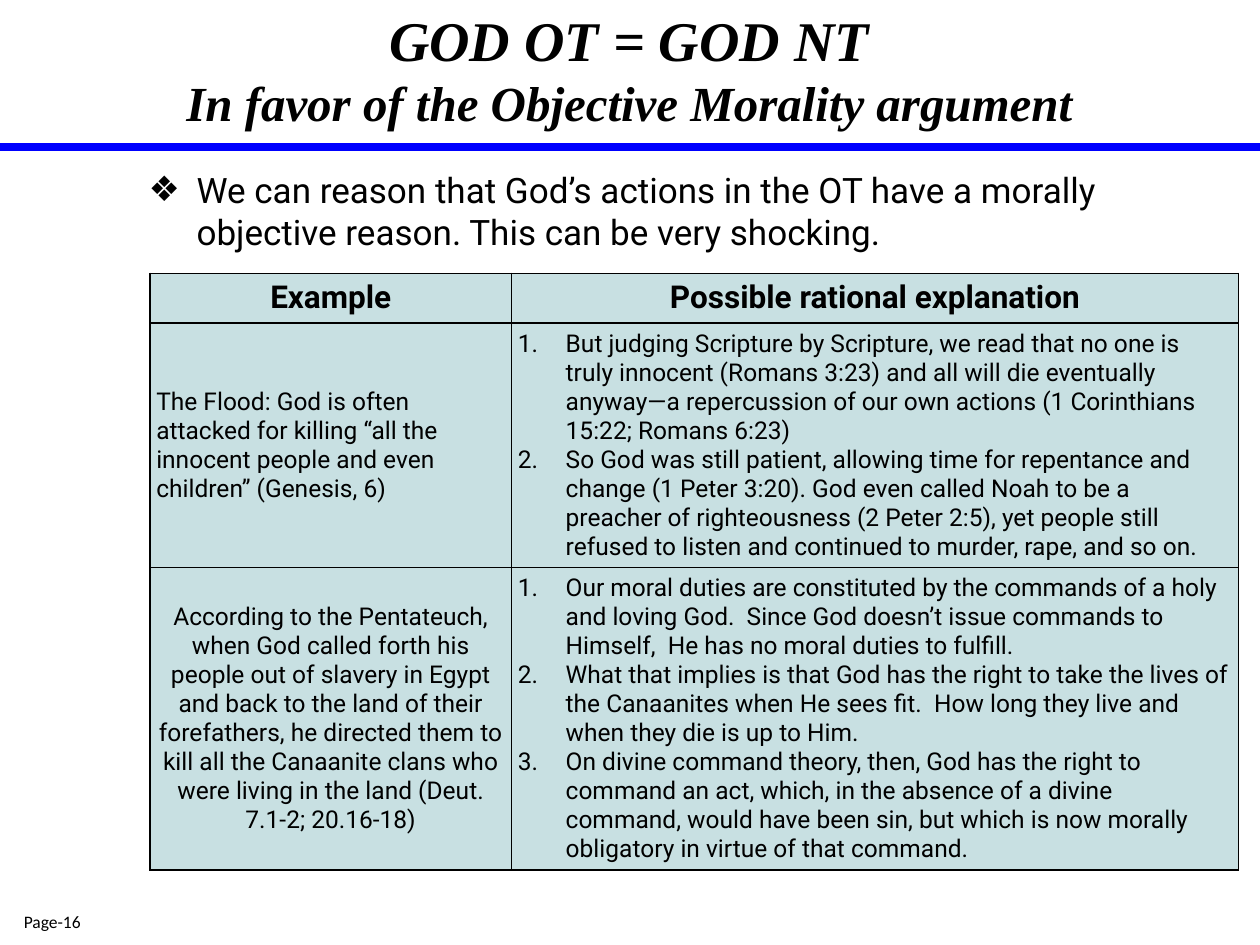
from dataclasses import dataclass

import lxml.etree
import pptx
import pptx.dml.color
import pptx.enum.shapes
import pptx.enum.text
import pptx.oxml.ns
import pptx.util

Inches = pptx.util.Inches
Pt = pptx.util.Pt
RGB = pptx.dml.color.RGBColor
Align = pptx.enum.text.PP_ALIGN
Anchor = pptx.enum.text.MSO_ANCHOR
qn = pptx.oxml.ns.qn


@dataclass(frozen=True)
class Theme:
    ink: RGB = RGB(0x00, 0x00, 0x00)
    rule: RGB = RGB(0x00, 0x00, 0xFF)
    cell: RGB = RGB(0xC8, 0xE0, 0xE2)
    title_font: str = "Times New Roman"
    body_font: str = "Roboto"
    page_font: str = "Calibri"
    title_size: int = 32
    subtitle_size: int = 28
    body_size: int = 20
    header_size: int = 18
    cell_size: int = 14
    page_size: int = 10
    rule_width: float = 4.5
    border_width: float = 1


THEME = Theme()
HANG = 0.38
CELL_INSET = 0.05
COLUMN_WIDTHS = (2.87, 5.77)
ROW_HEIGHTS = (0.39, 1.94, 2.4)

HEADERS = ("Example", "Possible rational explanation")
CASES = (
    (
        "The Flood: God is often attacked for killing “all the innocent people and even children” (Genesis, 6)",
        Align.LEFT,
        (
            "But judging Scripture by Scripture, we read that no one is truly innocent (Romans 3:23) and all will "
            "die eventually anyway—a repercussion of our own actions (1 Corinthians 15:22; Romans 6:23)",
            "So God was still patient, allowing time for repentance and change (1 Peter 3:20). God even called Noah "
            "to be a preacher of righteousness (2 Peter 2:5), yet people still refused to listen and continued to "
            "murder, rape, and so on.",
        ),
    ),
    (
        "According to the Pentateuch, when God called forth his people out of slavery in Egypt and back to the land "
        "of their forefathers, he directed them to kill all the Canaanite clans who were living in the land "
        "(Deut. 7.1-2; 20.16-18)",
        Align.CENTER,
        (
            "Our moral duties are constituted by the commands of a holy and loving God.  Since God doesn’t issue "
            "commands to Himself,  He has no moral duties to fulfill.",
            "What that implies is that God has the right to take the lives of the Canaanites when He sees fit.  How "
            "long they live and when they die is up to Him.",
            "On divine command theory, then, God has the right to command an act, which, in the absence of a divine "
            "command, would have been sin, but which is now morally obligatory in virtue of that command.",
        ),
    ),
)


def format_runs(paragraph, font, size, align=Align.LEFT, bold=False, italic=False):
    paragraph.alignment = align
    paragraph.space_before = Pt(0)
    for run in paragraph.runs:
        run.font.name = font
        run.font.size = Pt(size)
        run.font.bold = bold
        run.font.italic = italic
        run.font.color.rgb = THEME.ink


def add_marker(paragraph, tag, **attributes):
    properties = paragraph._p.get_or_add_pPr()
    properties.set("marL", str(Inches(HANG)))
    properties.set("indent", str(-Inches(HANG)))
    lxml.etree.SubElement(properties, qn(tag), attributes)


def place(shape, box):
    shape.left, shape.top, shape.width, shape.height = map(Inches, box)


def build_title(slide, box):
    title = slide.shapes.title
    place(title, box)
    frame = title.text_frame
    frame.auto_size = pptx.enum.text.MSO_AUTO_SIZE.NONE
    frame.vertical_anchor = Anchor.MIDDLE
    frame.text = "GOD OT = GOD NT\vIn favor of the Objective Morality argument"
    heading = frame.paragraphs[0]
    format_runs(heading, THEME.title_font, THEME.title_size, Align.CENTER, bold=True, italic=True)
    heading.runs[1].font.size = Pt(THEME.subtitle_size)


def build_rule(slide, left, right, y):
    rule = slide.shapes.add_connector(
        pptx.enum.shapes.MSO_CONNECTOR.STRAIGHT, Inches(left), Inches(y), Inches(right), Inches(y)
    )
    rule.line.color.rgb = THEME.rule
    rule.line.width = Pt(THEME.rule_width)
    lxml.etree.SubElement(rule._element.spPr, qn("a:effectLst"))


def build_claim(slide, box):
    body = slide.placeholders[1]
    place(body, box)
    frame = body.text_frame
    frame.auto_size = pptx.enum.text.MSO_AUTO_SIZE.NONE
    frame.text = "We can reason that God’s actions in the OT have a morally objective reason. This can be very shocking."
    claim = frame.paragraphs[0]
    format_runs(claim, THEME.body_font, THEME.body_size)
    add_marker(claim, "a:buChar", char="❖")


def style_cell(cell):
    cell.margin_left = cell.margin_right = cell.margin_top = cell.margin_bottom = Inches(CELL_INSET)
    cell.fill.solid()
    cell.fill.fore_color.rgb = THEME.cell
    properties = cell._tc.get_or_add_tcPr()
    for position, side in enumerate(("a:lnL", "a:lnR", "a:lnT", "a:lnB")):
        border = lxml.etree.Element(qn(side), w=str(Pt(THEME.border_width)))
        paint = lxml.etree.SubElement(border, qn("a:solidFill"))
        lxml.etree.SubElement(paint, qn("a:srgbClr"), val=str(THEME.ink))
        properties.insert(position, border)


def build_table(slide, left, top):
    table = slide.shapes.add_table(
        len(ROW_HEIGHTS), len(COLUMN_WIDTHS), Inches(left), Inches(top),
        Inches(sum(COLUMN_WIDTHS)), Inches(sum(ROW_HEIGHTS)),
    ).table
    table.first_row = table.horz_banding = False
    for column, width in zip(table.columns, COLUMN_WIDTHS):
        column.width = Inches(width)
    for row, height in zip(table.rows, ROW_HEIGHTS):
        row.height = Inches(height)
    for cell in table.iter_cells():
        style_cell(cell)

    for column, header in enumerate(HEADERS):
        cell = table.cell(0, column)
        cell.text_frame.text = header
        format_runs(cell.text_frame.paragraphs[0], THEME.body_font, THEME.header_size, Align.CENTER, bold=True)

    for row, (example, align, reasons) in enumerate(CASES, start=1):
        example_cell, reason_cell = table.cell(row, 0), table.cell(row, 1)
        example_cell.vertical_anchor = reason_cell.vertical_anchor = Anchor.MIDDLE
        example_cell.text_frame.text = example
        format_runs(example_cell.text_frame.paragraphs[0], THEME.body_font, THEME.cell_size, align)
        reason_cell.text_frame.text = "\n".join(reasons)
        for reason in reason_cell.text_frame.paragraphs:
            format_runs(reason, THEME.body_font, THEME.cell_size)
            add_marker(reason, "a:buAutoNum", type="arabicPeriod")


def build_page_label(slide, box):
    frame = slide.shapes.add_textbox(*map(Inches, box)).text_frame
    frame.word_wrap = True
    frame.text = "Page-16"
    format_runs(frame.paragraphs[0], THEME.page_font, THEME.page_size, Align.CENTER)


def main():
    deck = pptx.Presentation()
    deck.slide_width, deck.slide_height = Inches(10), Inches(7.5)
    slide = deck.slides.add_slide(deck.slide_layouts[1])
    build_rule(slide, 0, 10, 1.17)
    build_title(slide, (1.08, 0, 7.83, 1.08))
    build_table(slide, 1.19, 2.17)
    build_claim(slide, (1.08, 1.29, 8.75, 1.04))
    build_page_label(slide, (0, 7.18, 0.83, 0.33))
    deck.save("out.pptx")


if __name__ == "__main__":
    main()
